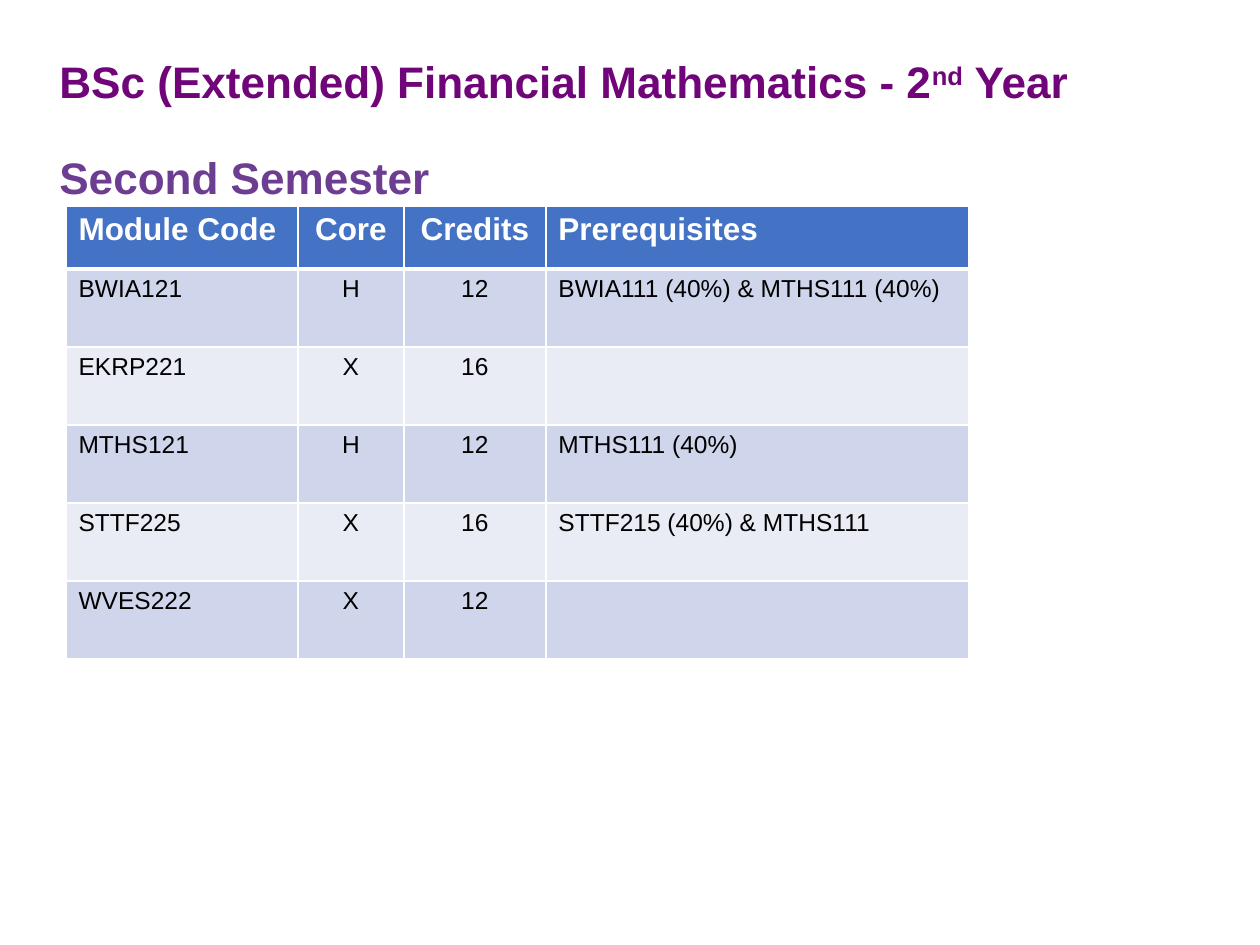
from lxml import etree
from pptx import Presentation
from pptx.dml.color import RGBColor
from pptx.enum.text import PP_ALIGN
from pptx.oxml.ns import qn
from pptx.util import Pt

EMU_PER_PX = 914400 // 126
BLANK_LAYOUT = 6
LEFT, CENTER = PP_ALIGN.LEFT, PP_ALIGN.CENTER
FONT = "Arial"
WHITE, BLACK = "FFFFFF", "000000"
PURPLE, VIOLET = "6F0579", "6C3D91"
HEADER_FILL, BAND_FILLS = "4472C4", ("CFD5EA", "E9EBF5")

COLUMN_WIDTHS = (232, 106, 142, 423)
COLUMN_ALIGNMENTS = (LEFT, CENTER, CENTER, LEFT)
HEADER_HEIGHT, ROW_HEIGHT = 63, 78
MODULES = (
    ("Module Code", "Core", "Credits", "Prerequisites"),
    ("BWIA121", "H", "12", "BWIA111 (40%) & MTHS111 (40%)"),
    ("EKRP221", "X", "16", ""),
    ("MTHS121", "H", "12", "MTHS111 (40%)"),
    ("STTF225", "X", "16", "STTF215 (40%) & MTHS111"),
    ("WVES222", "X", "12", ""),
)


def px(length):
    return length * EMU_PER_PX


def color(value):
    return RGBColor.from_string(value)


def style_font(paragraph, size, value, bold):
    font = paragraph.font
    font.name, font.size, font.bold = FONT, Pt(size), bold
    font.color.rgb = color(value)


def add_heading(slide, left, top, width, height):
    box = slide.shapes.add_textbox(px(left), px(top), px(width), px(height))
    frame = box.text_frame
    frame.word_wrap = True

    title = frame.paragraphs[0]
    title.add_run().text = "BSc (Extended) Financial Mathematics - 2"
    ordinal = title.add_run()
    ordinal.text = "nd"
    ordinal.font._element.set("baseline", "30000")
    title.add_run().text = " Year"

    semester = frame.add_paragraph()
    semester.text = "Second Semester"
    semester.space_before = Pt(28)

    for paragraph, value in ((title, PURPLE), (semester, VIOLET)):
        paragraph.line_spacing = 0.9
        style_font(paragraph, 25.2, value, True)


def set_borders(cell, bottom_width):
    """Draw white lines on all four sides, one point wide except the bottom."""
    properties = cell._tc.get_or_add_tcPr()
    widths = {"a:lnL": 1, "a:lnR": 1, "a:lnT": 1, "a:lnB": bottom_width}
    for tag, width in widths.items():
        line = etree.SubElement(properties, qn(tag), w=str(Pt(width)))
        fill = etree.SubElement(line, qn("a:solidFill"))
        etree.SubElement(fill, qn("a:srgbClr"), val=WHITE)


def add_module_table(slide, left, top):
    height = HEADER_HEIGHT + ROW_HEIGHT * (len(MODULES) - 1)
    frame = slide.shapes.add_table(
        len(MODULES), len(COLUMN_WIDTHS),
        px(left), px(top), px(sum(COLUMN_WIDTHS)), px(height))
    table = frame.table
    for column, width in zip(table.columns, COLUMN_WIDTHS):
        column.width = px(width)

    for row_index, values in enumerate(MODULES):
        is_header = row_index == 0
        table.rows[row_index].height = px(HEADER_HEIGHT if is_header else ROW_HEIGHT)
        fill = HEADER_FILL if is_header else BAND_FILLS[(row_index - 1) % 2]
        for column_index, text in enumerate(values):
            cell = table.cell(row_index, column_index)
            set_borders(cell, 3 if is_header else 1)
            cell.fill.solid()
            cell.fill.fore_color.rgb = color(fill)
            cell.text = text
            paragraph = cell.text_frame.paragraphs[0]
            paragraph.alignment = COLUMN_ALIGNMENTS[column_index]
            if is_header:
                style_font(paragraph, 18, WHITE, True)
            else:
                style_font(paragraph, 14, BLACK, False)


def main():
    presentation = Presentation()
    presentation.slide_width, presentation.slide_height = px(1260), px(945)
    slide = presentation.slides.add_slide(presentation.slide_layouts[BLANK_LAYOUT])
    add_heading(slide, 47, 54, 1166, 150)
    add_module_table(slide, 66, 206)
    presentation.save("out.pptx")


if __name__ == "__main__":
    main()
